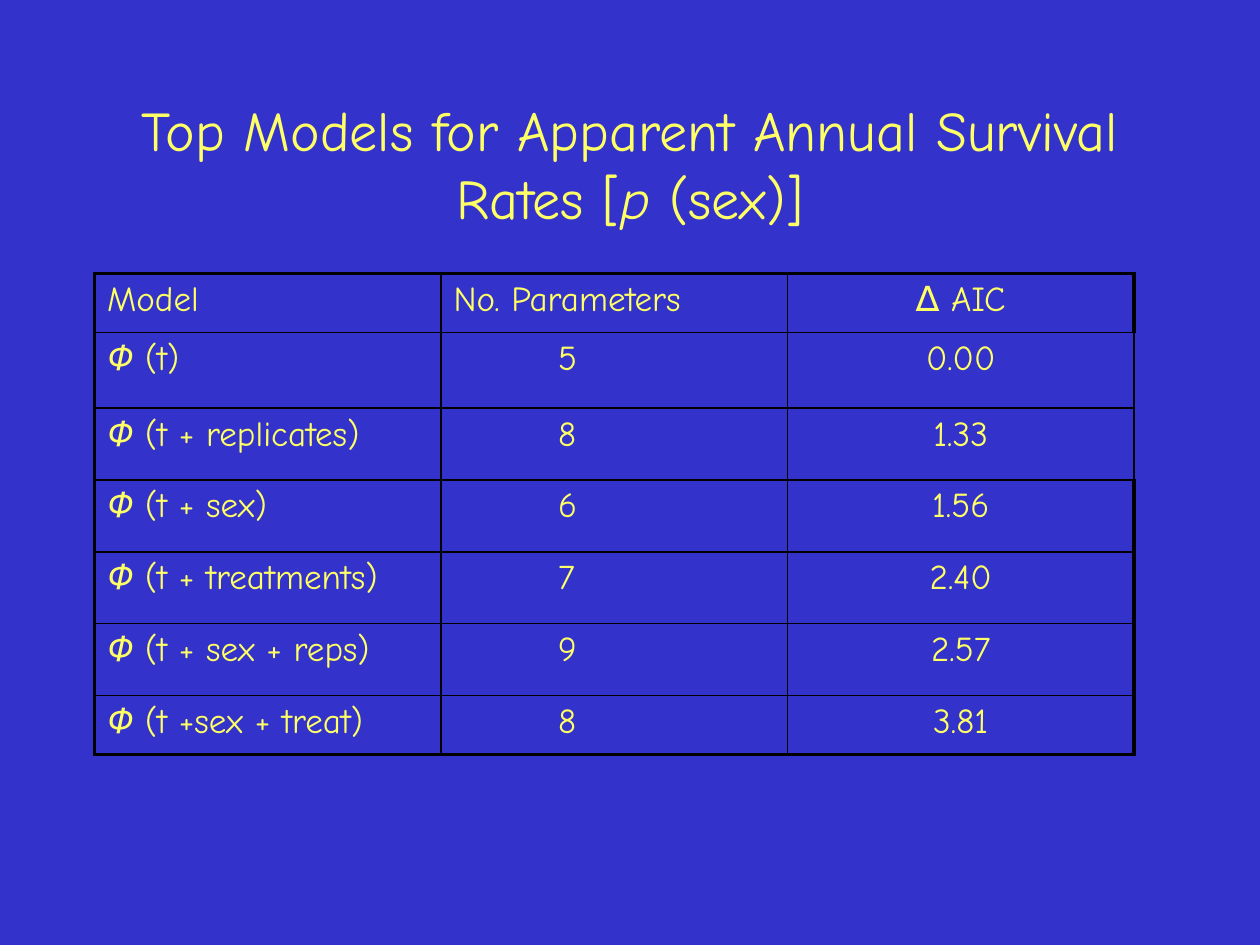
from lxml.etree import SubElement
from pptx import Presentation
from pptx.dml.color import RGBColor
from pptx.enum.text import MSO_ANCHOR, PP_ALIGN
from pptx.oxml.ns import qn
from pptx.util import Inches, Pt

FONT = "Comic Neue"
BLUE, YELLOW, BLACK = "3333CC", "FFFF66", "000000"
THIN, THICK = 1, 2.25
COL_WIDTH = 2.75
ROW_HEIGHTS = [0.47, 0.6, 0.57, 0.57, 0.57, 0.57, 0.47]
THIN_RIGHT_ROWS = (1, 2)
HEADER = ("Model", "No. Parameters", "∆ AIC")
MODELS = [
    ("(t)", "5", "0.00"),
    ("(t + replicates)", "8", "1.33"),
    ("(t + sex)", "6", "1.56"),
    ("(t + treatments)", "7", "2.40"),
    ("(t + sex + reps)", "9", "2.57"),
    ("(t +sex + treat)", "8", "3.81"),
]


def rgb(value):
    """Turn a hex string into a colour."""
    return RGBColor.from_string(value)


def write(p, runs, size, align=PP_ALIGN.LEFT):
    """Fill a paragraph with (text, italic) runs."""
    p.alignment = align
    for text, italic in runs:
        r = p.add_run()
        r.text = text
        r.font.name, r.font.size = FONT, Pt(size)
        r.font.italic, r.font.bold = italic, False
        r.font.color.rgb = rgb(YELLOW)


def add_title(s, runs):
    """Place and fill the title placeholder."""
    title = s.shapes.title
    title.left, title.top = Inches(0.75), Inches(0.67)
    title.width, title.height = Inches(8.5), Inches(1.25)
    tf = title.text_frame
    tf.word_wrap = True
    tf.vertical_anchor = MSO_ANCHOR.MIDDLE
    write(tf.paragraphs[0], runs, 32, PP_ALIGN.CENTER)


def set_borders(cell, **widths):
    """Draw black cell borders with the given widths in points."""
    tcPr = cell._tc.get_or_add_tcPr()
    for side in "LRTB":
        ln = SubElement(tcPr, qn(f"a:ln{side}"), w=str(Pt(widths[side])))
        fill = SubElement(ln, qn("a:solidFill"))
        SubElement(fill, qn("a:srgbClr"), val=BLACK)


def add_model_table(s):
    """Build the table of models with a thick outer frame."""
    rows = [[[(text, False)] for text in HEADER]]
    rows += [[[("Φ ", True), (model, False)], [(count, False)], [(aic, False)]]
             for model, count, aic in MODELS]
    last_row, last_col = len(rows) - 1, len(HEADER) - 1
    table = s.shapes.add_table(
        len(rows), len(HEADER), Inches(0.75), Inches(2.17),
        Inches(COL_WIDTH * len(HEADER)), Inches(sum(ROW_HEIGHTS))).table
    table.first_row = table.horz_banding = False
    for col in table.columns:
        col.width = Inches(COL_WIDTH)
    for i, row in enumerate(rows):
        table.rows[i].height = Inches(ROW_HEIGHTS[i])
        for j, runs in enumerate(row):
            cell = table.cell(i, j)
            thick_right = j == last_col and i not in THIN_RIGHT_ROWS
            set_borders(cell,
                        L=THICK if j == 0 else THIN,
                        R=THICK if thick_right else THIN,
                        T=THICK if i == 0 else THIN,
                        B=THICK if i == last_row else THIN)
            cell.fill.background()
            if i > 0 and j == 1:
                cell.margin_left = Inches(0.93)
            align = PP_ALIGN.CENTER if j == last_col else PP_ALIGN.LEFT
            write(cell.text_frame.paragraphs[0], runs, 20, align)


def main():
    """Build and save the slide."""
    prs = Presentation()
    prs.slide_width, prs.slide_height = Inches(10), Inches(7.5)
    s = prs.slides.add_slide(prs.slide_layouts[5])
    s.background.fill.solid()
    s.background.fill.fore_color.rgb = rgb(BLUE)
    add_title(s, [("Top Models for Apparent Annual Survival Rates [", False),
                  ("p ", True), ("(sex)]", False)])
    add_model_table(s)
    prs.save("out.pptx")


if __name__ == "__main__":
    main()
